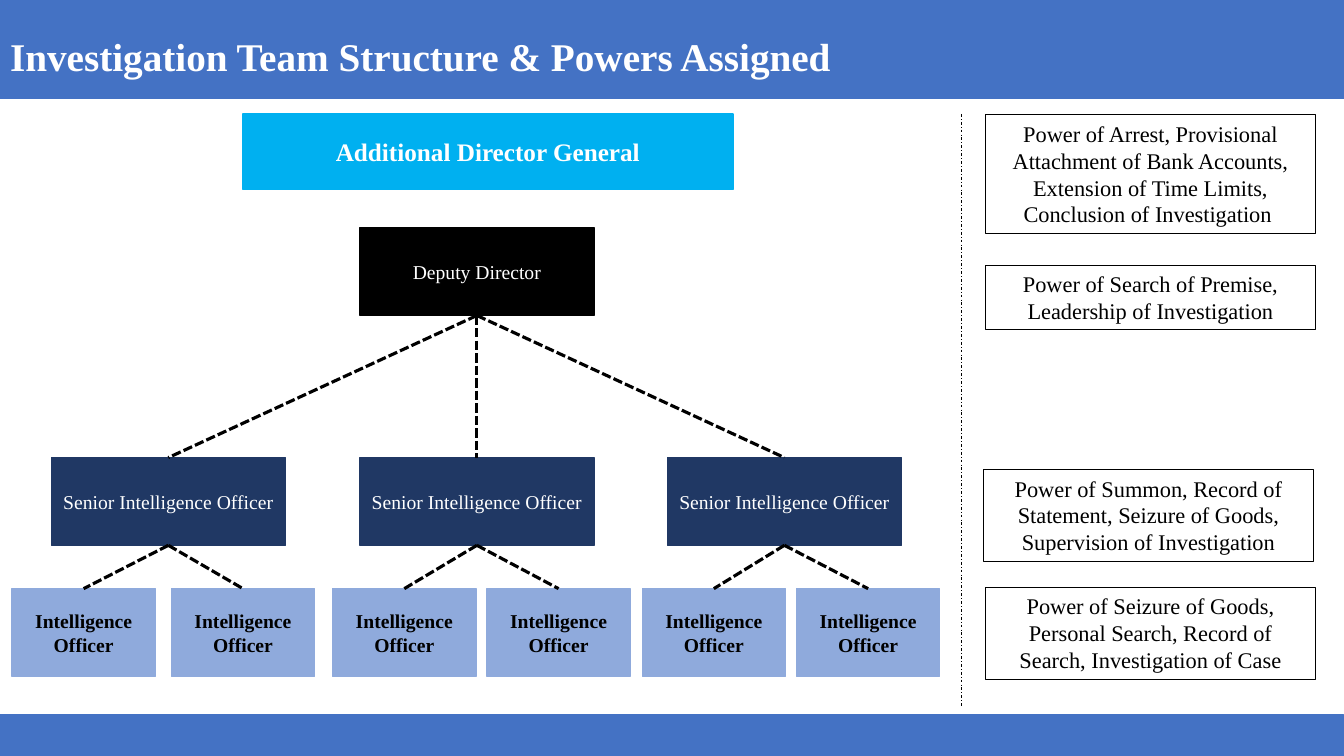
from pptx import Presentation
from pptx.dml.color import RGBColor
from pptx.enum.dml import MSO_LINE
from pptx.enum.shapes import MSO_CONNECTOR, MSO_SHAPE
from pptx.enum.text import MSO_ANCHOR, MSO_AUTO_SIZE, PP_ALIGN
from pptx.oxml.ns import qn
from pptx.util import Inches, Pt
from lxml import etree

RECTANGLE = MSO_SHAPE.RECTANGLE
STRAIGHT = MSO_CONNECTOR.STRAIGHT
SHORT_DASH = MSO_LINE.SQUARE_DOT
DASH_DOT = MSO_LINE.DASH_DOT
LEFT, CENTER = PP_ALIGN.LEFT, PP_ALIGN.CENTER
TOP, MIDDLE = MSO_ANCHOR.TOP, MSO_ANCHOR.MIDDLE
FIT_SHAPE = MSO_AUTO_SIZE.SHAPE_TO_FIT_TEXT

WHITE = RGBColor(0xFF, 0xFF, 0xFF)
BLACK = RGBColor(0x00, 0x00, 0x00)
BAND_BLUE = RGBColor(0x44, 0x72, 0xC4)
SKY_BLUE = RGBColor(0x00, 0xB0, 0xF0)
NAVY = RGBColor(0x20, 0x38, 0x64)
PALE_BLUE = RGBColor(0x8F, 0xAA, 0xDC)

FONT = "Times New Roman"
TOP_SITE, BOTTOM_SITE = 0, 2

# Left edge of each senior officer, with those of the two officers below
TEAMS = [
    (0.51, (0.12, 1.70)),
    (3.57, (3.30, 4.83)),
    (6.62, (6.37, 7.90)),
]

# Left, top, height and wording of each list of powers
POWERS = [
    (9.77, 1.14, 1.18, "Power of Arrest, Provisional Attachment of Bank Accounts, "
                       "Extension of Time Limits, Conclusion of Investigation "),
    (9.77, 2.63, 0.64, "Power of Search of Premise, Leadership of Investigation"),
    (9.75, 4.66, 0.91, "Power of Summon, Record of Statement, Seizure of Goods, "
                       "Supervision of Investigation"),
    (9.77, 5.83, 0.91, "Power of Seizure of Goods, Personal Search, Record of "
                       "Search, Investigation of Case"),
]


def write(shape, text, size, color, bold=False, align=CENTER, anchor=MIDDLE):
    frame = shape.text_frame
    frame.word_wrap = True
    frame.vertical_anchor = anchor
    frame.text = text
    paragraph = frame.paragraphs[0]
    paragraph.alignment = align
    font = paragraph.font
    font.name, font.size, font.bold = FONT, Pt(size), bold
    font.color.rgb = color


def add_box(slide, left, top, width, height, fill, line, line_width=1):
    box = slide.shapes.add_shape(
        RECTANGLE, Inches(left), Inches(top), Inches(width), Inches(height))
    box.shadow.inherit = False
    if fill is None:
        box.fill.background()
    else:
        box.fill.solid()
        box.fill.fore_color.rgb = fill
    box.line.color.rgb = line
    box.line.width = Pt(line_width)
    return box


def add_role(slide, text, left, top, width, height, fill,
             color=WHITE, size=14, bold=False):
    role = add_box(slide, left, top, width, height, fill, fill)
    write(role, text, size, color, bold)
    return role


def add_power(slide, left, top, height, text):
    power = add_box(slide, left, top, 3.28, height, None, BLACK, 0.75)
    write(power, text, 16, BLACK, anchor=TOP)
    power.text_frame.auto_size = FIT_SHAPE


def add_line(slide, start, end, width, dash):
    line = slide.shapes.add_connector(
        STRAIGHT, *(Inches(value) for value in (*start, *end)))
    line.line.color.rgb = BLACK
    line.line.width = Pt(width)
    line.line.dash_style = dash
    etree.SubElement(line.element.spPr, qn("a:effectLst"))
    return line


def link(slide, superior, subordinate):
    line = add_line(slide, (0, 0), (1, 1), 2.25, SHORT_DASH)
    line.begin_connect(superior, BOTTOM_SITE)
    line.end_connect(subordinate, TOP_SITE)


def add_heading(slide):
    title = slide.shapes.title
    # The bands go behind the title
    for top, height, line_width in ((0, 0.96, 3), (7.1, 0.4, 2.25)):
        band = add_box(slide, 0, top, 13.33, height, BAND_BLUE, BAND_BLUE, line_width)
        title.element.addprevious(band.element)
    title.left, title.top = Inches(0), Inches(0.27)
    title.width, title.height = Inches(12.01), Inches(0.57)
    write(title, "Investigation Team Structure & Powers Assigned", 28, WHITE,
          bold=True, align=LEFT, anchor=TOP)
    title.text_frame.auto_size = FIT_SHAPE


def add_team_chart(slide):
    add_role(slide, "Additional Director General", 2.41, 1.13, 4.86, 0.75,
             SKY_BLUE, size=18, bold=True)
    deputy = add_role(slide, "Deputy Director", 3.57, 2.26, 2.32, 0.87, BLACK)
    for senior_left, officer_lefts in TEAMS:
        senior = add_role(slide, "Senior Intelligence Officer",
                          senior_left, 4.54, 2.32, 0.87, NAVY)
        link(slide, deputy, senior)
        for officer_left in officer_lefts:
            officer = add_role(slide, "Intelligence Officer", officer_left, 5.84,
                               1.42, 0.87, PALE_BLUE, BLACK, bold=True)
            link(slide, senior, officer)


def main():
    prs = Presentation()
    prs.slide_width, prs.slide_height = Inches(13.33), Inches(7.5)
    slide = prs.slides.add_slide(prs.slide_layouts.get_by_name("Title Only"))

    add_heading(slide)
    add_team_chart(slide)

    # Divider and powers column
    add_line(slide, (9.53, 1.13), (9.53, 7), 0.5, DASH_DOT)
    for left, top, height, text in POWERS:
        add_power(slide, left, top, height, text)

    prs.save("out.pptx")


if __name__ == "__main__":
    main()
